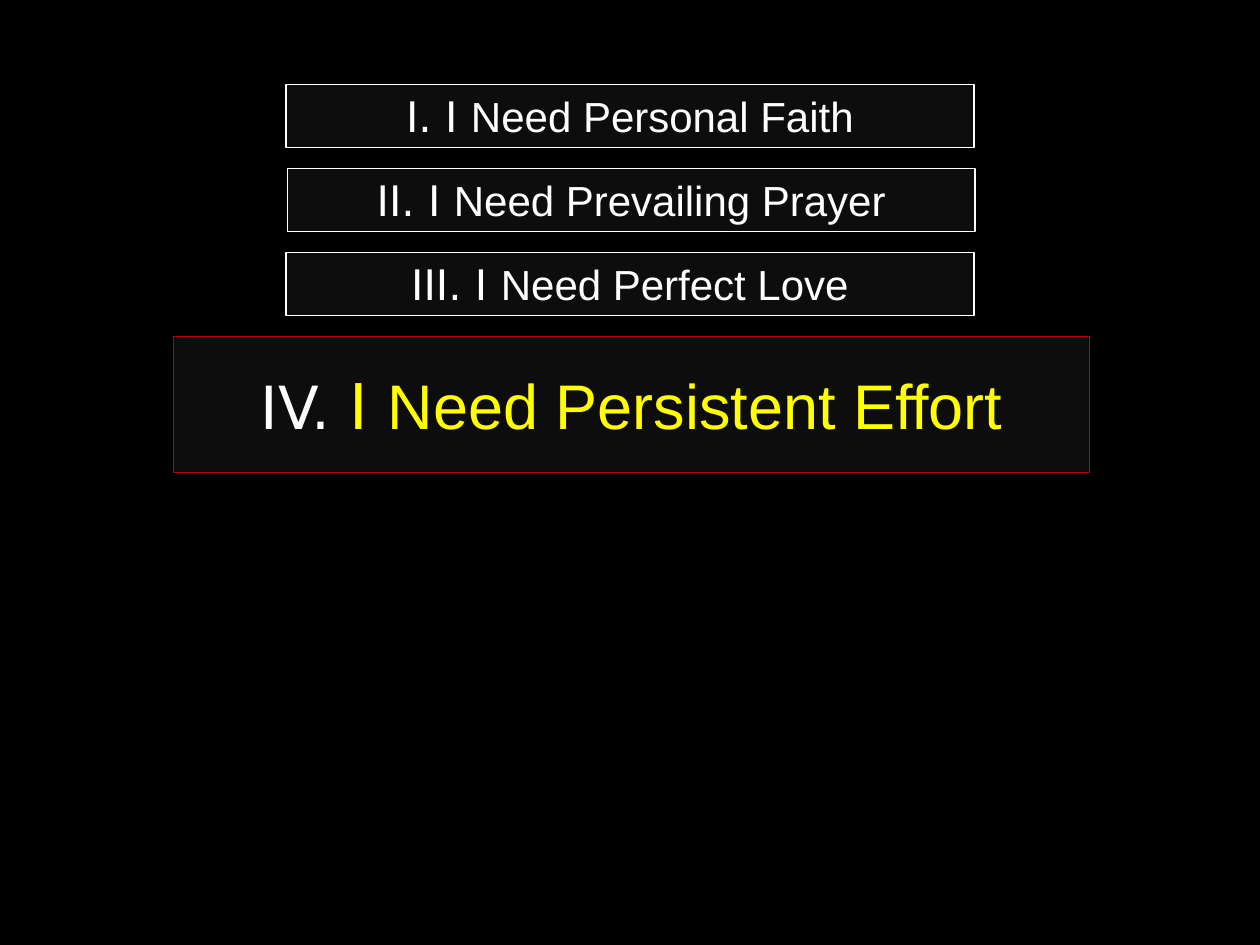
from pptx import Presentation
from pptx.dml.color import RGBColor
from pptx.enum.shapes import MSO_SHAPE
from pptx.enum.text import MSO_ANCHOR, MSO_AUTO_SIZE, PP_ALIGN
from pptx.util import Inches, Pt

RECTANGLE = MSO_SHAPE.RECTANGLE
MIDDLE = MSO_ANCHOR.MIDDLE
NO_AUTOFIT = MSO_AUTO_SIZE.NONE
CENTER = PP_ALIGN.CENTER

TITLE_ONLY_LAYOUT = 5
NUMERAL_FONT = "DejaVu Sans"
TEXT_FONT = "Arial"
BLACK = "000000"
PANEL = "0D0D0D"
WHITE = "FFFFFF"
YELLOW = "FFFF00"
RED = "C00000"

FIRST_TOP = 0.67
ROW_STEP = 2 / 3
POINT_SIZE = (5.46, 0.5)


def color(hex_value):
    return RGBColor.from_string(hex_value)


def style_panel(shape, left, top, size, line_color):
    width, height = size
    shape.left, shape.top = Inches(left), Inches(top)
    shape.width, shape.height = Inches(width), Inches(height)
    shape.fill.solid()
    shape.fill.fore_color.rgb = color(PANEL)
    shape.line.color.rgb = color(line_color)
    shape.line.width = Pt(0.75)


def write_runs(shape, runs):
    """Fill the shape with one centred line of (text, font, size, colour) runs."""
    text_frame = shape.text_frame
    text_frame.word_wrap = True
    text_frame.auto_size = NO_AUTOFIT
    text_frame.vertical_anchor = MIDDLE
    paragraph = text_frame.paragraphs[0]
    paragraph.alignment = CENTER
    for text, font_name, size, text_color in runs:
        run = paragraph.add_run()
        run.text = text
        run.font.name = font_name
        run.font.size = Pt(size)
        run.font.color.rgb = color(text_color)


def add_rectangle(slide):
    shape = slide.shapes.add_shape(RECTANGLE, 0, 0, 0, 0)
    shape.shadow.inherit = False
    return shape


def point_runs(numeral, text):
    return [(f"{numeral}. I ", NUMERAL_FONT, 24, WHITE),
            (text, TEXT_FONT, 24, WHITE)]


def main():
    presentation = Presentation()
    presentation.slide_width = Inches(10)
    presentation.slide_height = Inches(7.5)
    slide = presentation.slides.add_slide(
        presentation.slide_layouts[TITLE_ONLY_LAYOUT])
    slide.background.fill.solid()
    slide.background.fill.fore_color.rgb = color(BLACK)

    points = [
        ("I", "Need Personal Faith", 2.27),
        ("II", "Need Prevailing Prayer", 2.28),
        ("III", "Need Perfect Love", 2.27),
    ]
    for row, (numeral, text, left) in enumerate(points):
        shape = slide.shapes.title if row == 0 else add_rectangle(slide)
        style_panel(shape, left, FIRST_TOP + row * ROW_STEP, POINT_SIZE, WHITE)
        write_runs(shape, point_runs(numeral, text))

    current_point = add_rectangle(slide)
    style_panel(current_point, 1.38, FIRST_TOP + len(points) * ROW_STEP,
                (7.27, 1.08), RED)
    write_runs(current_point, [
        ("IV. ", NUMERAL_FONT, 34, WHITE),
        ("I ", NUMERAL_FONT, 36, YELLOW),
        ("Need Persistent Effort", TEXT_FONT, 36, YELLOW),
    ])

    presentation.save("out.pptx")


if __name__ == "__main__":
    main()
